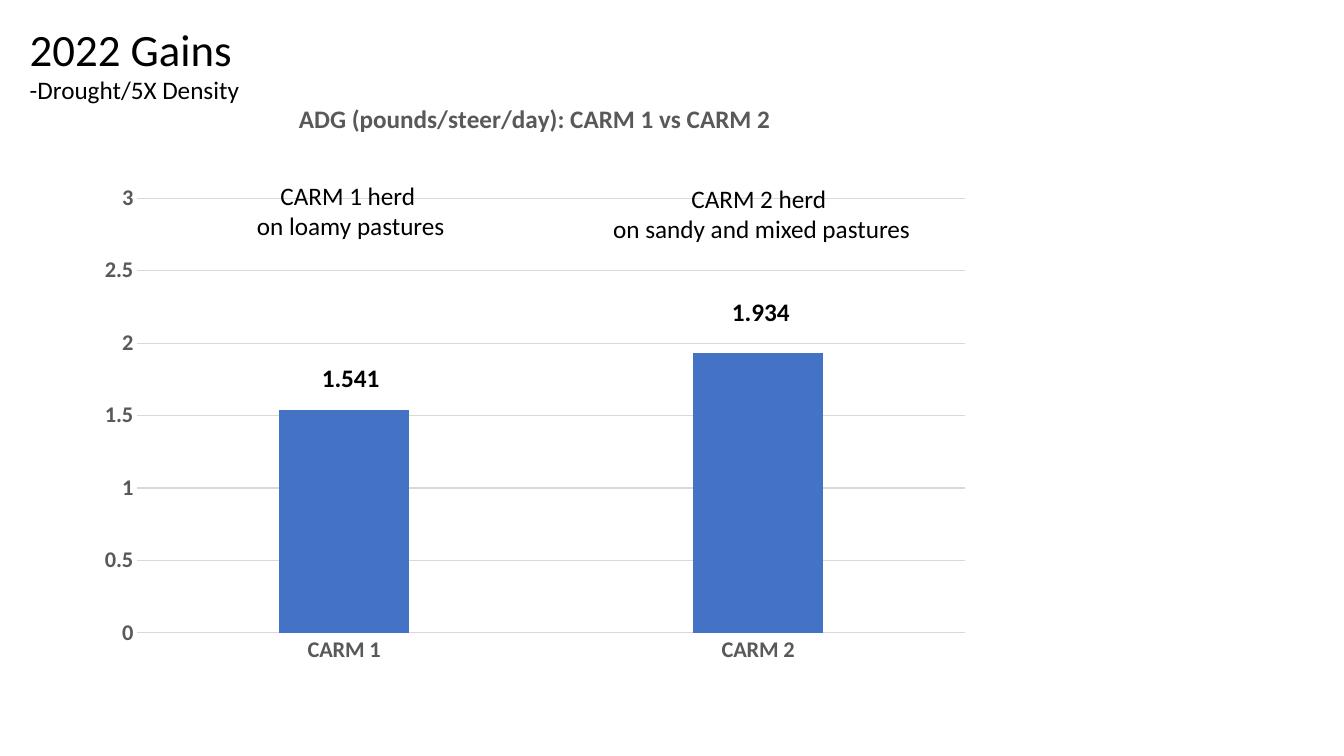
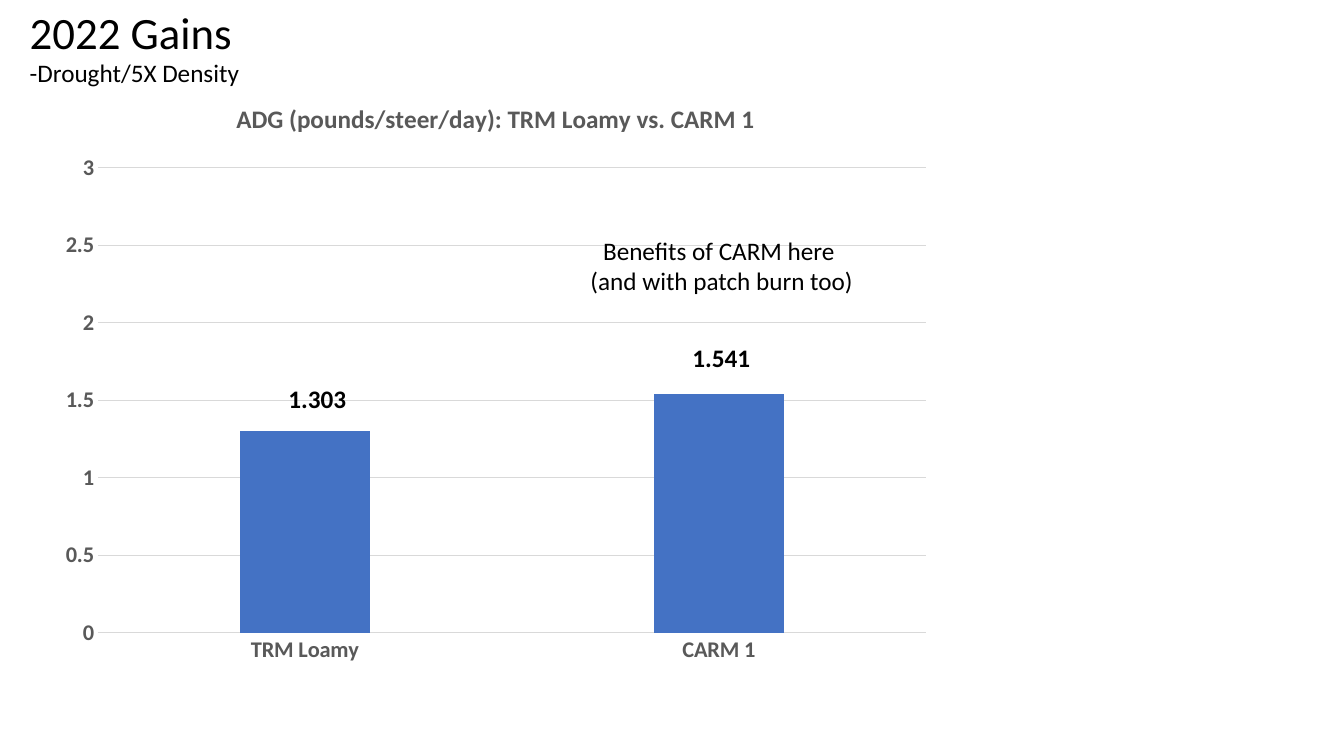
from dataclasses import dataclass
from lxml import etree
from pptx import Presentation
from pptx.chart import data
from pptx.dml import color
from pptx.enum import chart as kinds, text
from pptx.oxml import ns
from pptx.util import Pt


@dataclass(frozen=True)
class Theme:
    """Colours, font and type sizes shared by the slides."""
    ink: str = "000000"
    grey: str = "595959"
    rule: str = "D9D9D9"
    bar: str = "4472C4"
    face: str = "Calibri"
    head: int = 32
    body: int = 18
    axis: int = 16


LOOK = Theme()
WIDE, HIGH = 640, 427


def rgb(hue):
    """Turn a hex string into a colour."""
    return color.RGBColor.from_string(hue)


def style(font, size, hue=LOOK.ink, bold=False):
    """Give a font the shared face with a size, colour and weight."""
    font.name, font.size, font.bold = LOOK.face, Pt(size), bold
    font.color.rgb = rgb(hue)


def place(shape, left, top, wide, high):
    """Move and size a shape in points."""
    shape.left, shape.top = Pt(left), Pt(top)
    shape.width, shape.height = Pt(wide), Pt(high)


def head(slide, left, top):
    """Set the title and its smaller second line."""
    title = slide.shapes.title
    place(title, left, top, 591, 68)
    frame = title.text_frame
    frame.text = "2022 Gains\n-Drought/5X Density"
    frame.word_wrap = True
    frame.auto_size = text.MSO_AUTO_SIZE.NONE
    frame.vertical_anchor = text.MSO_ANCHOR.TOP
    for line, size in zip(frame.paragraphs, (LOOK.head, LOOK.body)):
        line.alignment = text.PP_ALIGN.LEFT
        style(line.runs[0].font, size)
    frame.paragraphs[1].line_spacing = 0.97


def label(slide, words, left, top, wide, bold=False):
    """Add a text box with one or more centred lines."""
    high = 7.2 + 21.8 * len(words.split("\n"))
    box = slide.shapes.add_textbox(Pt(left), Pt(top), Pt(wide), Pt(high))
    frame = box.text_frame
    frame.text = words
    frame.word_wrap = False
    for line in frame.paragraphs:
        line.alignment = text.PP_ALIGN.CENTER
        style(line.runs[0].font, LOOK.body, bold=bold)


def fix(chart, top):
    """Fix the inner plot area below the given top, in points."""
    left, wide, base = 36, 591.4, 395.2
    plot = chart.plots[0]._element.getparent()
    for old in plot.findall(ns.qn("c:layout")):
        plot.remove(old)
    layout = etree.Element(ns.qn("c:layout"))
    manual = etree.SubElement(layout, ns.qn("c:manualLayout"))
    parts = dict(layoutTarget="inner", xMode="edge", yMode="edge",
                 x=left / WIDE, y=top / HIGH,
                 w=wide / WIDE, h=(base - top) / HIGH)
    for name, value in parts.items():
        etree.SubElement(manual, ns.qn(f"c:{name}")).set("val", str(value))
    plot.insert(0, layout)


def columns(slide, name, cats, vals, left, top, inner):
    """Add the column chart of gains at the given corner."""
    table = data.CategoryChartData()
    table.categories = cats
    table.add_series("Series 1", vals)
    chart = slide.shapes.add_chart(
        kinds.XL_CHART_TYPE.COLUMN_CLUSTERED,
        Pt(left), Pt(top), Pt(WIDE), Pt(HIGH), table).chart
    style(chart.font, 10)
    chart.has_legend = False
    chart.has_title = True
    title = chart.chart_title
    title.include_in_layout = False
    title.text_frame.text = name
    style(title.text_frame.paragraphs[0].runs[0].font,
          LOOK.body, LOOK.grey, True)
    for axis in (chart.category_axis, chart.value_axis):
        axis.major_tick_mark = kinds.XL_TICK_MARK.NONE
        axis.minor_tick_mark = kinds.XL_TICK_MARK.NONE
        style(axis.tick_labels.font, LOOK.axis, LOOK.grey, True)
    scale = chart.value_axis
    scale.minimum_scale, scale.maximum_scale = 0, 3
    scale.major_unit = 0.5
    scale.has_major_gridlines = True
    scale.format.line.fill.background()
    for line in (chart.category_axis.format.line,
                 scale.major_gridlines.format.line):
        line.color.rgb, line.width = rgb(LOOK.rule), Pt(0.75)
    plot = chart.plots[0]
    plot.gap_width, plot.overlap = 219, -27
    plot.vary_by_categories = False
    fill = plot.series[0].format.fill
    fill.solid()
    fill.fore_color.rgb = rgb(LOOK.bar)
    fix(chart, inner)


def gains(deck, rise, name, bars, left, inner, marks, notes):
    """Build one slide: heading, chart, bar values and notes."""
    slide = deck.slides.add_slide(deck.slide_layouts[5])
    top = 57
    columns(slide, name, list(bars), list(bars.values()), left, top, inner)
    for words, across, down in marks:
        label(slide, words, left + across, top + down, 56, True)
    for words, mid, down, wide in notes:
        label(slide, words, left + mid - wide / 2, top + down, wide)
    head(slide, 14, rise)


def main():
    """Build and save the deck."""
    deck = Presentation()
    deck.slide_width, deck.slide_height = Pt(960), Pt(540)
    gains(deck, 12.2, "ADG (pounds/steer/day): CARM 1 vs CARM 2",
          {"CARM 1": 1.54, "CARM 2": 1.93}, 62, 84.6,
          [("1.541", 160.5, 198), ("1.934", 453.5, 151)],
          [("CARM 1 herd \non loamy pastures", 188.5, 68.3, 154),
           ("CARM 2 herd \non sandy and mixed pastures", 482, 70.2, 229)])
    gains(deck, 0, "ADG (pounds/steer/day): TRM Loamy vs. CARM 1",
          {"TRM Loamy": 1.3, "CARM 1": 1.54}, 34, 62.8,
          [("1.303", 164.7, 213), ("1.541", 453.2, 184)],
          [("Benefits of CARM here \n(and with patch burn too)",
            481.5, 107.7, 204)])
    deck.save("out.pptx")


if __name__ == "__main__":
    main()
